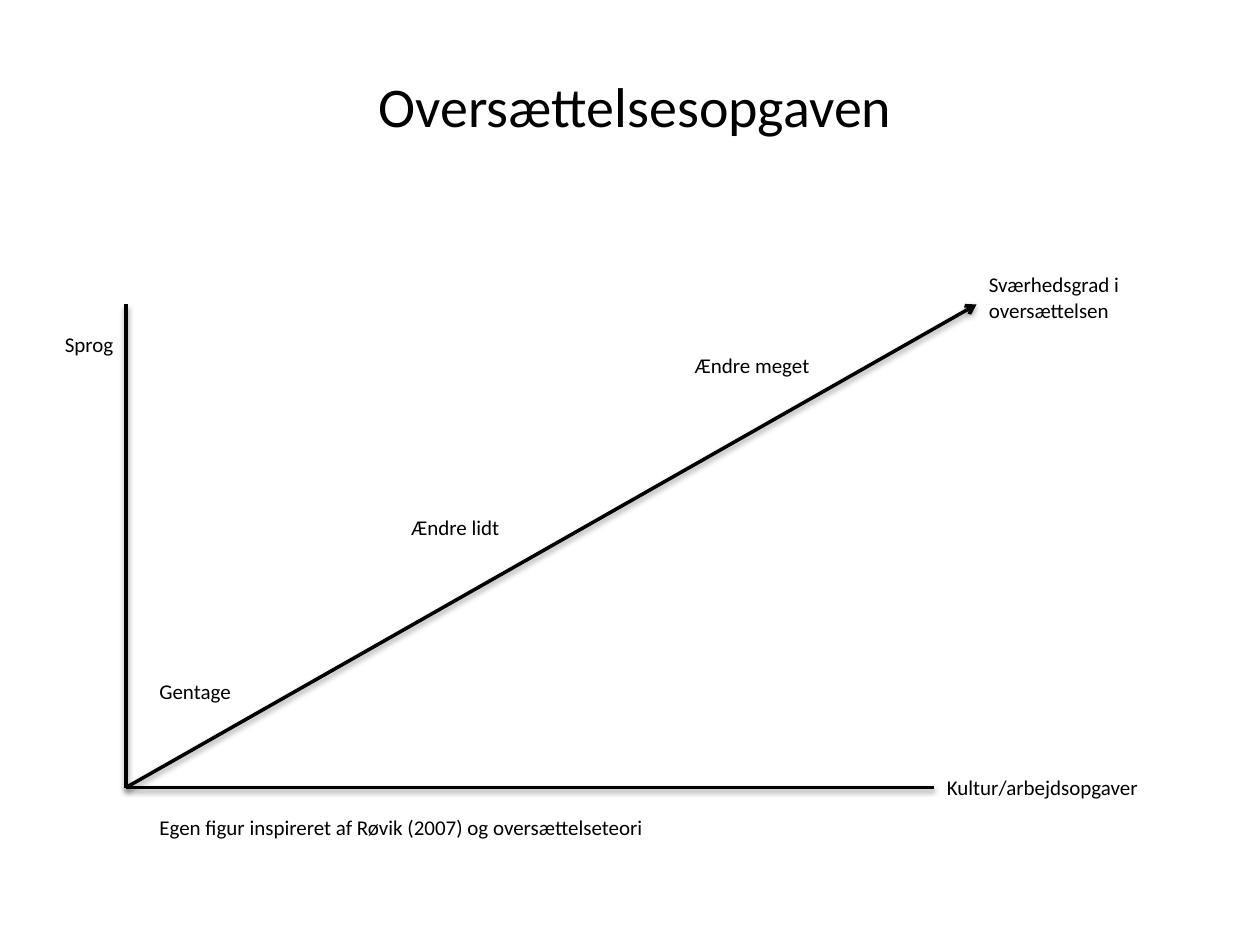
from lxml.etree import SubElement
from pptx import Presentation
from pptx.dml.color import RGBColor
from pptx.enum.shapes import MSO_CONNECTOR
from pptx.enum.text import MSO_ANCHOR, PP_ALIGN
from pptx.oxml import parse_xml
from pptx.oxml.ns import nsdecls, qn
from pptx.util import Inches, Pt

BLACK = RGBColor(0, 0, 0)
COLUMNS, ROWS = 120, 90
LABEL_WIDTH, LABEL_HEIGHT = 24, 3.6

ORIGIN = (12, 75)
LANGUAGE_END = (12, 29)
CULTURE_END = (89, 75)
DIFFICULTY_END = (93, 29)

SHADOW = (
    f'<a:effectLst {nsdecls("a")}>'
    f'<a:outerShdw blurRad="{Pt(3.1)}" dist="{Pt(1.6)}" dir="5400000" rotWithShape="0">'
    f'<a:srgbClr val="{BLACK}"><a:alpha val="38000"/></a:srgbClr>'
    '</a:outerShdw></a:effectLst>'
)


class DiagramSlide:
    """Places elements on a slide by columns and rows of its grid."""

    font_format = {"name": "Calibri", "bold": False}
    line_width = Pt(2)

    def __init__(self, presentation):
        self.slide = presentation.slides.add_slide(presentation.slide_layouts[6])
        self.column = presentation.slide_width / COLUMNS
        self.row = presentation.slide_height / ROWS

    def position(self, column, row):
        return round(column * self.column), round(row * self.row)

    def text(self, words, column, row, width=LABEL_WIDTH, height=LABEL_HEIGHT,
             size=12, align=PP_ALIGN.LEFT, anchor=MSO_ANCHOR.TOP):
        shape = self.slide.shapes.add_textbox(
            *self.position(column, row), *self.position(width, height))
        frame = shape.text_frame
        frame.word_wrap = True
        frame.vertical_anchor = anchor
        paragraph = frame.paragraphs[0]
        paragraph.alignment = align
        run = paragraph.add_run()
        run.text = words
        for name, value in {**self.font_format, "size": Pt(size)}.items():
            setattr(run.font, name, value)
        run.font.color.rgb = BLACK

    def line(self, start, end, arrow=False):
        connector = self.slide.shapes.add_connector(
            MSO_CONNECTOR.STRAIGHT, *self.position(*start), *self.position(*end))
        connector.line.color.rgb = BLACK
        connector.line.width = self.line_width
        if arrow:
            SubElement(connector.line._get_or_add_ln(), qn("a:tailEnd"), type="arrow")
        connector._element.spPr.append(parse_xml(SHADOW))


def main():
    presentation = Presentation()
    presentation.slide_width = Inches(10)
    presentation.slide_height = Inches(7.5)

    diagram = DiagramSlide(presentation)
    diagram.text("Oversættelsesopgaven", 1, 7, width=119, height=6, size=32,
                 align=PP_ALIGN.CENTER, anchor=MSO_ANCHOR.MIDDLE)

    diagram.line(LANGUAGE_END, ORIGIN)
    diagram.line(ORIGIN, CULTURE_END)
    diagram.line(ORIGIN, DIFFICULTY_END, arrow=True)

    for words, column, row in (
        ("Sprog", 5, 31),
        ("Gentage", 14, 64),
        ("Ændre lidt", 38, 48.4),
        ("Ændre meget", 65, 33),
        ("Kultur/arbejdsopgaver", 89, 73.2),
    ):
        diagram.text(words, column, row)
    diagram.text("Sværhedsgrad i oversættelsen", 93, 25.3, height=6.1)
    diagram.text("Egen figur inspireret af Røvik (2007) og oversættelseteori",
                 14, 77, width=69)

    presentation.save("out.pptx")


if __name__ == "__main__":
    main()
